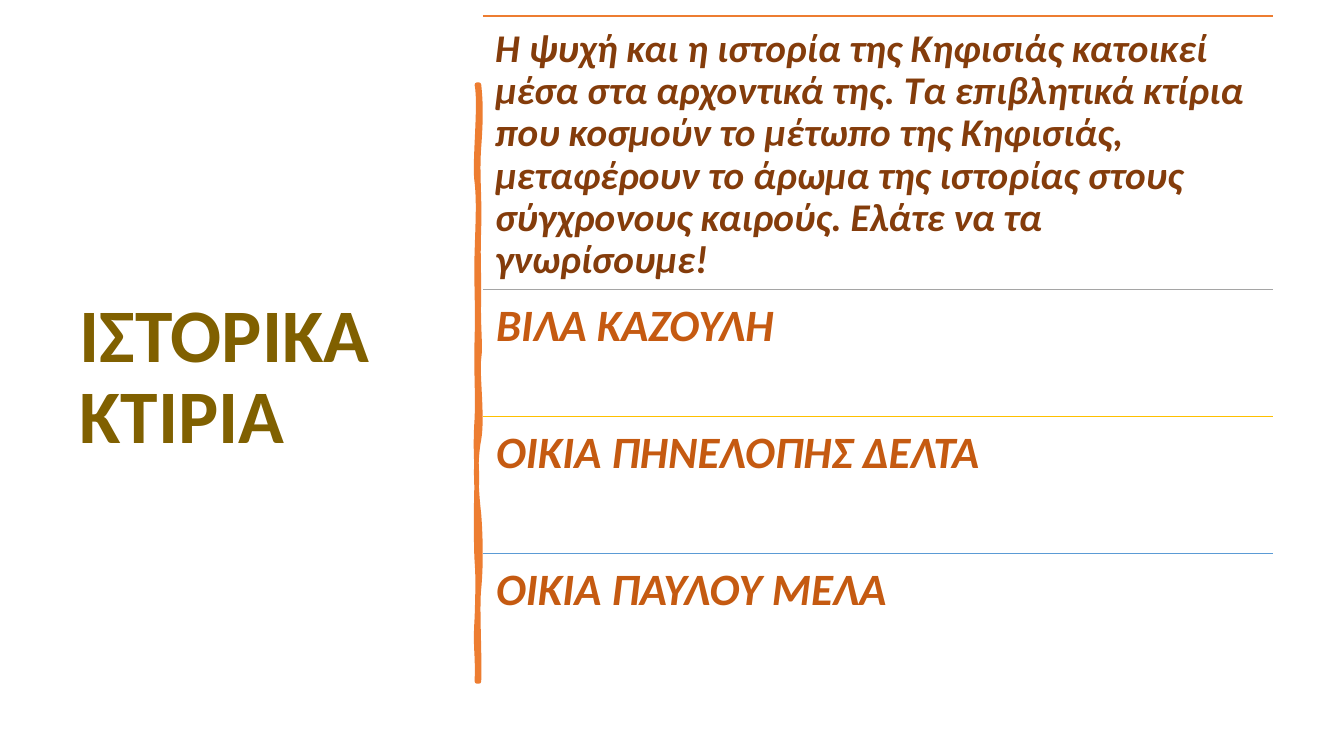
import pptx
import pptx.util
import pptx.dml.color
import pptx.enum.shapes
import pptx.enum.text
import pptx.oxml

HEADING = "ΙΣΤΟΡΙΚΑ ΚΤΙΡΙΑ"
INTRO = (
    "Η ψυχή και η ιστορία της Κηφισιάς κατοικεί μέσα στα αρχοντικά της. "
    "Τα επιβλητικά κτίρια που κοσμούν το μέτωπο της Κηφισιάς, μεταφέρουν "
    "το άρωμα της ιστορίας στους σύγχρονους καιρούς. Ελάτε να τα γνωρίσουμε!"
)
ENTRIES = [
    {"text": INTRO, "height": 2.71, "rule": "orange", "style": "intro"},
    {"text": "ΒΙΛΑ ΚΑΖΟΥΛΗ", "height": 1.26, "rule": "grey", "style": "building"},
    {"text": "ΟΙΚΙΑ ΠΗΝΕΛΟΠΗΣ ΔΕΛΤΑ", "height": 1.36, "rule": "gold", "style": "building"},
    {"text": "ΟΙΚΙΑ ΠΑΥΛΟΥ ΜΕΛΑ", "height": 1.26, "rule": "blue", "style": "building"},
]

THEME = {
    "font": "Calibri",
    "orange": "ED7D31",
    "grey": "A5A5A5",
    "gold": "FFC000",
    "blue": "5B9BD5",
    "title": {"size": 54, "color": "806000"},
    "intro": {"size": 28, "color": "843C0B", "italic": True, "inset": 0.12},
    "building": {"size": 32, "color": "C55A11", "italic": True, "inset": 0.13},
    "rule_width": 1,
    "brush_width": 3.25,
}

SLIDE_SIZE = (13.33, 7.5)
TITLE_BOX = (0.69, 0.7, 3.74, 6.11)
LIST_LEFT, LIST_TOP, LIST_WIDTH = 4.79, 0.16, 7.84
DRAWING = 'xmlns:a="http://schemas.openxmlformats.org/drawingml/2006/main"'

BRUSH_CORNER = (4.73, 0.84)
BRUSH_START = (4.75, 0.84)
BRUSH_CURVES = [
    ((4.77, 1.02), (4.77, 1.19), (4.75, 1.46)),
    ((4.73, 1.73), (4.76, 1.95), (4.75, 2.26)),
    ((4.74, 2.57), (4.75, 2.62), (4.75, 2.94)),
    ((4.74, 3.25), (4.77, 3.42), (4.75, 3.56)),
    ((4.73, 3.7), (4.79, 4.14), (4.75, 4.36)),
    ((4.71, 4.57), (4.72, 4.84), (4.75, 5.1)),
    ((4.77, 5.36), (4.77, 5.64), (4.75, 5.84)),
    ((4.73, 6.03), (4.76, 6.5), (4.75, 6.76)),
    ((4.74, 6.76), (4.73, 6.76), (4.73, 6.76)),
    ((4.74, 6.46), (4.71, 6.44), (4.73, 6.13)),
    ((4.74, 5.83), (4.74, 5.7), (4.73, 5.57)),
    ((4.72, 5.44), (4.72, 4.95), (4.73, 4.77)),
    ((4.73, 4.59), (4.71, 4.45), (4.73, 4.15)),
    ((4.74, 3.86), (4.72, 3.73), (4.73, 3.35)),
    ((4.74, 2.98), (4.72, 2.81), (4.73, 2.5)),
    ((4.74, 2.18), (4.75, 2), (4.73, 1.81)),
    ((4.7, 1.63), (4.77, 1.04), (4.73, 0.84)),
]


def inches(values):
    return [pptx.util.Inches(value) for value in values]


def rgb(value):
    return pptx.dml.color.RGBColor.from_string(value)


def write(holder, text, *, size, color, italic=False, inset=None, anchor="TOP"):
    frame = holder.text_frame
    frame.word_wrap = True
    frame.auto_size = pptx.enum.text.MSO_AUTO_SIZE.NONE
    frame.vertical_anchor = pptx.enum.text.MSO_ANCHOR[anchor]
    if inset is not None:
        margin = pptx.util.Inches(inset)
        frame.margin_left = frame.margin_right = margin
        frame.margin_top = frame.margin_bottom = margin
    paragraph = frame.paragraphs[0]
    paragraph.alignment = pptx.enum.text.PP_ALIGN.LEFT
    paragraph.line_spacing = 0.9
    run = paragraph.add_run()
    run.text = text
    font = run.font
    font.name = THEME["font"]
    font.size = pptx.util.Pt(size)
    font.bold, font.italic = True, italic
    font.color.rgb = rgb(color)


def add_rule(slide, top, color):
    rule = slide.shapes.add_connector(
        pptx.enum.shapes.MSO_CONNECTOR.STRAIGHT,
        *inches((LIST_LEFT, top, LIST_LEFT + LIST_WIDTH, top)),
    )
    rule.line.color.rgb = rgb(color)
    rule.line.width = pptx.util.Pt(THEME["rule_width"])
    rule._element.spPr.append(pptx.oxml.parse_xml(f"<a:effectLst {DRAWING}/>"))


def bend(segment, curve):
    left, top = inches(BRUSH_CORNER)
    points = "".join(
        f'<a:pt x="{x - left}" y="{y - top}"/>' for x, y in map(inches, curve)
    )
    bezier = pptx.oxml.parse_xml(f"<a:cubicBezTo {DRAWING}>{points}</a:cubicBezTo>")
    segment.getparent().replace(segment, bezier)


def add_brush(slide):
    outline = slide.shapes.build_freeform(*inches(BRUSH_START), scale=1.0)
    outline.add_line_segments([inches(curve[-1]) for curve in BRUSH_CURVES], close=True)
    brush = outline.convert_to_shape()
    for segment, curve in zip(brush._element.xpath(".//a:lnTo"), BRUSH_CURVES):
        bend(segment, curve)
    brush.shadow.inherit = False
    brush.fill.solid()
    brush.fill.fore_color.rgb = rgb(THEME["orange"])
    brush.line.color.rgb = rgb(THEME["orange"])
    brush.line.width = pptx.util.Pt(THEME["brush_width"])


def main():
    deck = pptx.Presentation()
    deck.slide_width, deck.slide_height = inches(SLIDE_SIZE)
    slide = deck.slides.add_slide(deck.slide_layouts[5])
    title = slide.shapes.title
    title.left, title.top, title.width, title.height = inches(TITLE_BOX)
    write(title, HEADING, anchor="MIDDLE", **THEME["title"])
    add_brush(slide)
    top = LIST_TOP
    for entry in ENTRIES:
        add_rule(slide, top, THEME[entry["rule"]])
        box = slide.shapes.add_textbox(*inches((LIST_LEFT, top, LIST_WIDTH, entry["height"])))
        write(box, entry["text"], **THEME[entry["style"]])
        top += entry["height"]
    deck.save("out.pptx")


if __name__ == "__main__":
    main()
